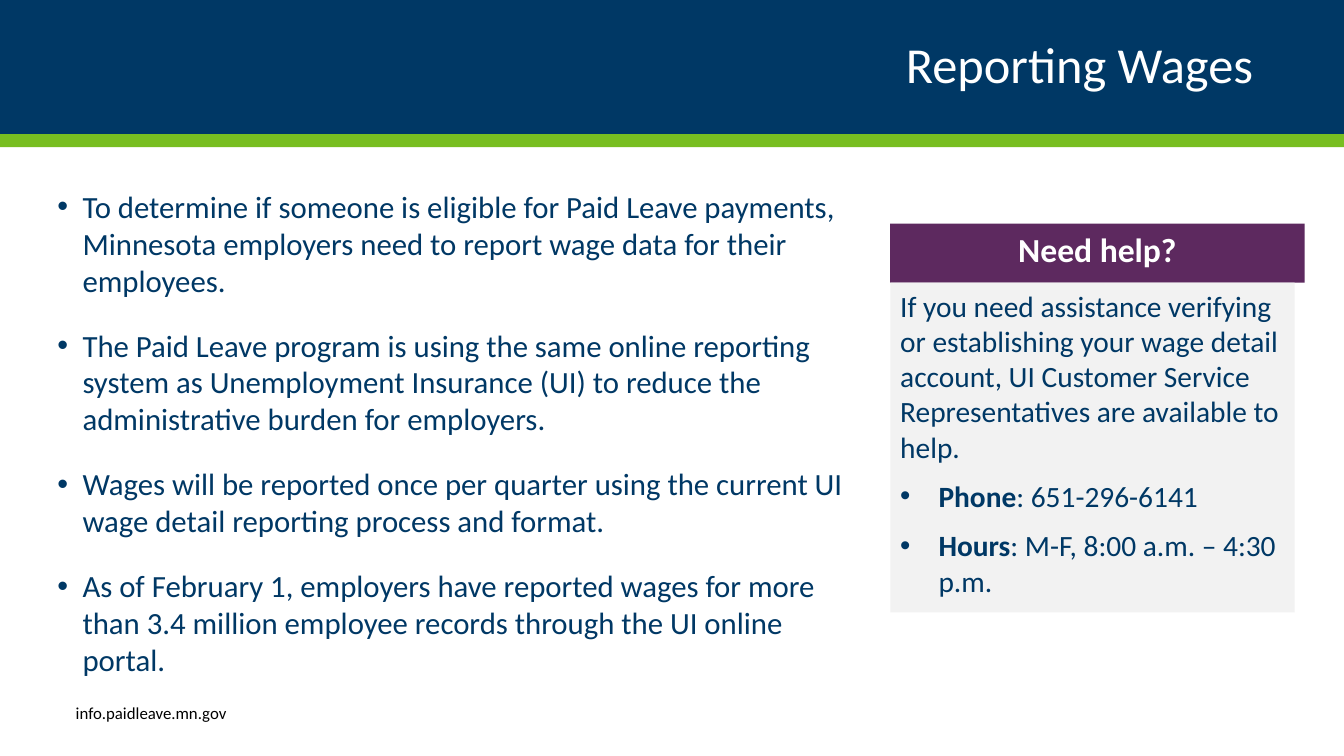
from dataclasses import dataclass

from lxml import etree
from pptx import Presentation, util as u
from pptx.dml.color import RGBColor
from pptx.enum import shapes, text
from pptx.oxml import ns

WIDE, HIGH = u.Inches(13.33), u.Inches(7.5)
FONT = "Calibri"
HUES = {
    "navy": "003865", "green": "78BE21", "plum": "5D295F",
    "gray": "F2F2F2", "white": "FFFFFF", "black": "000000",
}
ALIGN = text.PP_ALIGN


@dataclass
class Para:
    """One paragraph; lead is its bold opening, indent in inches adds a bullet."""
    words: str
    lead: str = ""
    indent: float = 0


@dataclass
class Box:
    """A block of text; left, top, width and height are percent of the slide."""
    left: float
    top: float
    width: float
    height: float
    paras: tuple[Para, ...] = ()
    size: int = 12
    ink: str = "navy"
    fill: str = ""
    bold: bool = False
    align: ALIGN = ALIGN.LEFT
    before: int = 0
    after: int = 0
    lines: float = 1
    inset: float = 0.1
    middle: bool = False
    grow: bool = False


EDGE, TOP = 66.24, 29.6
BAND = 17.73
HEAD = 7.8

BOXES = (
    Box(0, BAND, 100, 1.73, fill="green"),
    Box(0, 0, 100, BAND, (Para("Reporting Wages"),), 36, "white", "navy",
        align=ALIGN.RIGHT, lines=0.9, inset=0.9, middle=True),
    Box(3.53, 24.13, 61.37, 66.93, (
        Para("To determine if someone is eligible for Paid Leave payments, "
             "Minnesota employers need to report wage data for their employees.",
             indent=0.25),
        Para("The Paid Leave program is using the same online reporting system "
             "as Unemployment Insurance (UI) to reduce the administrative "
             "burden for employers.", indent=0.25),
        Para("Wages will be reported once per quarter using the current UI "
             "wage detail reporting process and format.", indent=0.25),
        Para("As of February 1, employers have reported wages for more than "
             "3.4 million employee records through the UI online portal.",
             indent=0.25),
    ), 22, before=10, after=10),
    Box(EDGE, TOP, 30.83, HEAD, (Para("Need help?"),), 24, "white", "plum",
        bold=True, align=ALIGN.CENTER, after=10),
    Box(EDGE, TOP + HEAD, 30.08, 43.6, (
        Para("If you need assistance verifying or establishing your wage "
             "detail account, UI Customer Service Representatives are "
             "available to help."),
        Para(": 651-296-6141", "Phone", 0.38),
        Para(": M-F, 8:00 a.m. – 4:30 p.m.", "Hours", 0.38),
    ), 21, fill="gray", after=10),
    Box(0, 92.27, 22.5, 4, (Para("info.paidleave.mn.gov"),), ink="black",
        align=ALIGN.CENTER, grow=True),
)


def hue(name: str) -> RGBColor:
    return RGBColor.from_string(HUES[name])


def add_dot(line, indent: float, ink: str) -> None:
    """Give a paragraph a coloured bullet with a hanging indent."""
    props = line._p.get_or_add_pPr()
    step = u.Inches(indent)
    props.set("marL", str(step))
    props.set("indent", str(-step))
    tint = etree.SubElement(props, ns.qn("a:buClr"))
    etree.SubElement(tint, ns.qn("a:srgbClr"), val=HUES[ink])
    etree.SubElement(props, ns.qn("a:buFont"), typeface="Arial")
    etree.SubElement(props, ns.qn("a:buChar"), char="•")


def add_para(line, para: Para, box: Box) -> None:
    line.text = para.lead or para.words
    if para.lead:
        line.add_run().text = para.words
    for run in line.runs:
        run.font.name = FONT
        run.font.size = u.Pt(box.size)
        run.font.bold = box.bold
        run.font.color.rgb = hue(box.ink)
    if para.lead:
        line.runs[0].font.bold = True
    line.alignment = box.align
    line.line_spacing = box.lines
    line.space_before = u.Pt(box.before)
    line.space_after = u.Pt(box.after)
    if para.indent:
        add_dot(line, para.indent, box.ink)


def add_box(slide, box: Box) -> None:
    place = [int(side * share / 100) for side, share in (
        (WIDE, box.left), (HIGH, box.top), (WIDE, box.width), (HIGH, box.height))]
    if box.fill:
        shape = slide.shapes.add_shape(shapes.MSO_SHAPE.RECTANGLE, *place)
        shape.shadow.inherit = False
        shape.fill.solid()
        shape.fill.fore_color.rgb = hue(box.fill)
        shape.line.fill.background()
    else:
        shape = slide.shapes.add_textbox(*place)
    if not box.paras:
        return
    frame = shape.text_frame
    frame.word_wrap = True
    frame.margin_left = frame.margin_right = u.Inches(box.inset)
    frame.margin_top = frame.margin_bottom = u.Inches(0.05)
    anchor = text.MSO_ANCHOR
    frame.vertical_anchor = anchor.MIDDLE if box.middle else anchor.TOP
    fit = text.MSO_AUTO_SIZE
    frame.auto_size = fit.SHAPE_TO_FIT_TEXT if box.grow else fit.NONE
    for spot, para in enumerate(box.paras):
        line = frame.add_paragraph() if spot else frame.paragraphs[0]
        add_para(line, para, box)


def main() -> None:
    deck = Presentation()
    deck.slide_width, deck.slide_height = WIDE, HIGH
    slide = deck.slides.add_slide(deck.slide_layouts[6])
    for box in BOXES:
        add_box(slide, box)
    deck.save("out.pptx")


if __name__ == "__main__":
    main()
